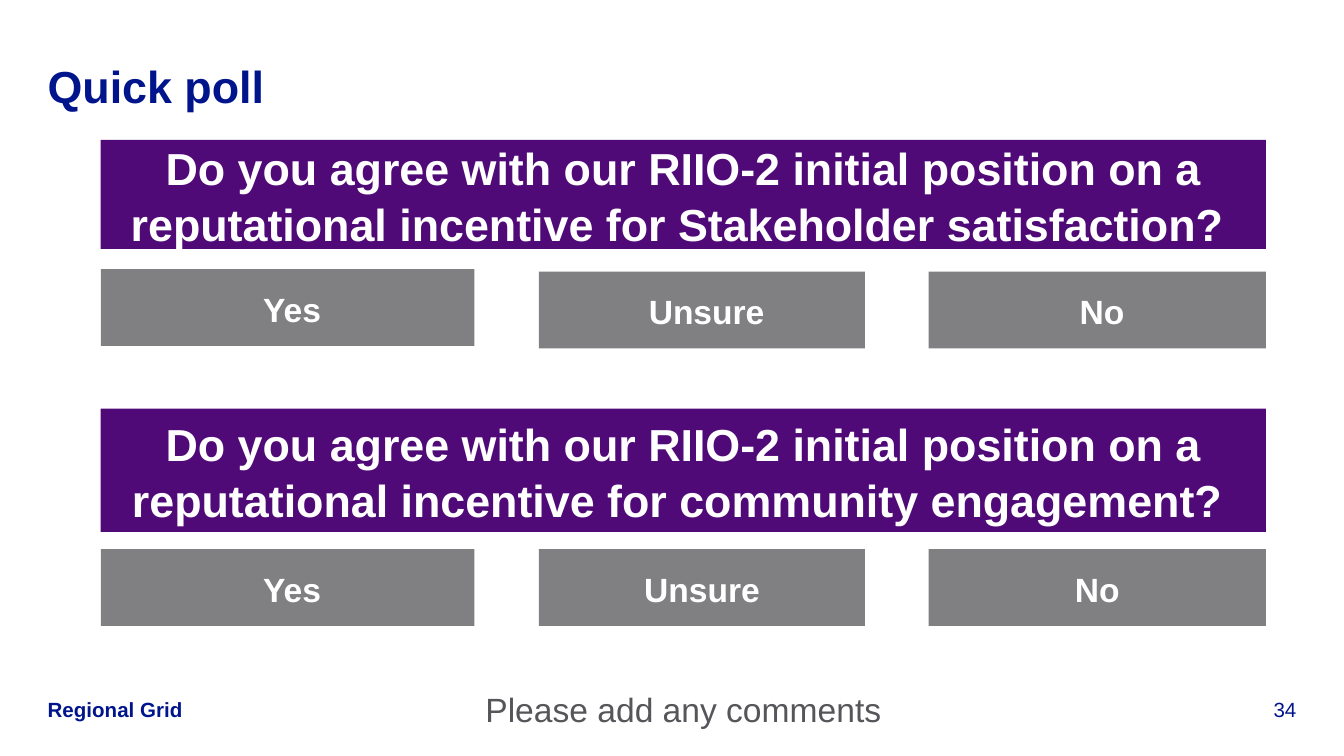
"""Build the quick poll slide with two questions and their answer boxes."""
from dataclasses import dataclass

from pptx import Presentation
from pptx.dml.color import RGBColor
from pptx.enum.shapes import MSO_SHAPE
from pptx.enum.text import MSO_ANCHOR, MSO_AUTO_SIZE, PP_ALIGN
from pptx.util import Pt

RECT = MSO_SHAPE.RECTANGLE
TOP, MIDDLE, BOTTOM = MSO_ANCHOR.TOP, MSO_ANCHOR.MIDDLE, MSO_ANCHOR.BOTTOM
LEFT, CENTER, RIGHT = PP_ALIGN.LEFT, PP_ALIGN.CENTER, PP_ALIGN.RIGHT
NO_FIT, GROW = MSO_AUTO_SIZE.NONE, MSO_AUTO_SIZE.SHAPE_TO_FIT_TEXT

NAVY = RGBColor(0x00, 0x14, 0x8C)
PURPLE = RGBColor(0x50, 0x0A, 0x78)
GREY = RGBColor(0x80, 0x80, 0x83)
DARK_GREY = RGBColor(0x55, 0x55, 0x5A)
WHITE = RGBColor(0xFF, 0xFF, 0xFF)

LEFT_EDGE, BODY_W, ANSWER_H = 54, 624.2, 41.2
COLUMNS = ((54, 200.2), (288.7, 174.7), (497.5, 180.7))
QUESTION = "Do you agree with our RIIO-2 initial position on a reputational incentive for {}? "


@dataclass
class Style:
    size: float
    color: RGBColor
    bold: bool = False
    align: PP_ALIGN = LEFT
    anchor: MSO_ANCHOR = MIDDLE
    after: float = 0
    spacing: float = 1.0


@dataclass
class Poll:
    topic: str
    top: float
    height: float
    answers: tuple[str, ...]
    answer_tops: tuple[float, ...]


TITLE = Style(24, NAVY, True)
ASK = Style(24, WHITE, True, CENTER, after=6, spacing=1.05)
ANSWER = Style(18, WHITE, True, CENTER, after=6, spacing=1.05)
COMMENT = Style(18, DARK_GREY, align=CENTER, anchor=TOP, after=6, spacing=1.05)
FOOTER = Style(11, NAVY, True, anchor=BOTTOM)
NUMBER = Style(11, NAVY, align=RIGHT, anchor=BOTTOM)

POLLS = (
    Poll("Stakeholder satisfaction", 75, 58.4, (" Yes", " Unsure", " No"), (144.2, 145.5, 145.5)),
    Poll("community engagement", 219, 66, ("Yes", "Unsure", "No"), (294.2,) * 3),
)
POLLS[1].answers = (" Yes", "Unsure", "No")


def write(sp, text: str, style: Style, inset: bool = False, fit: MSO_AUTO_SIZE = NO_FIT) -> None:
    tf = sp.text_frame
    frame = {"word_wrap": True, "auto_size": fit, "vertical_anchor": style.anchor}
    if not inset:
        frame |= {f"margin_{side}": 0 for side in ("left", "top", "right", "bottom")}
    p = tf.paragraphs[0]
    r = p.add_run()
    r.text = text
    para = {"alignment": style.align, "space_before": Pt(0),
            "space_after": Pt(style.after), "line_spacing": style.spacing}
    font = {"name": "Arial", "size": Pt(style.size), "bold": style.bold}
    for obj, values in ((tf, frame), (p, para), (r.font, font)):
        for name, value in values.items():
            setattr(obj, name, value)
    r.font.color.rgb = style.color


def add_bar(s, x: float, y: float, w: float, h: float, fill: RGBColor, text: str, style: Style) -> None:
    sp = s.shapes.add_shape(RECT, Pt(x), Pt(y), Pt(w), Pt(h))
    sp.shadow.inherit = False
    sp.fill.solid()
    sp.fill.fore_color.rgb = fill
    sp.line.fill.background()
    write(sp, text, style, inset=True)


def add_label(s, x: float, y: float, w: float, h: float, text: str, style: Style) -> None:
    sp = s.shapes.add_textbox(Pt(x), Pt(y), Pt(w), Pt(h))
    write(sp, text, style, fit=GROW)


def add_poll(s, poll: Poll) -> None:
    add_bar(s, LEFT_EDGE, poll.top, BODY_W, poll.height, PURPLE, QUESTION.format(poll.topic), ASK)
    for (x, w), y, answer in zip(COLUMNS, poll.answer_tops, poll.answers):
        add_bar(s, x, y, w, ANSWER_H, GREY, answer, ANSWER)


def main() -> None:
    prs = Presentation()
    prs.slide_width, prs.slide_height = Pt(720), Pt(405)
    s = prs.slides.add_slide(prs.slide_layouts[5])
    title = s.shapes.title
    box = {"left": 25.5, "top": 29, "width": 669, "height": 34}
    for name, value in box.items():
        setattr(title, name, Pt(value))
    write(title, "Quick poll", TITLE)
    for poll in POLLS:
        add_poll(s, poll)
    add_label(s, LEFT_EDGE, 368, BODY_W, 21.8, "Please add any comments", COMMENT)
    add_label(s, 25.5, 373, 90, 13.4, "Regional Grid", FOOTER)
    add_label(s, 652.5, 373, 42, 13.4, "34", NUMBER)
    prs.save("out.pptx")


if __name__ == "__main__":
    main()
